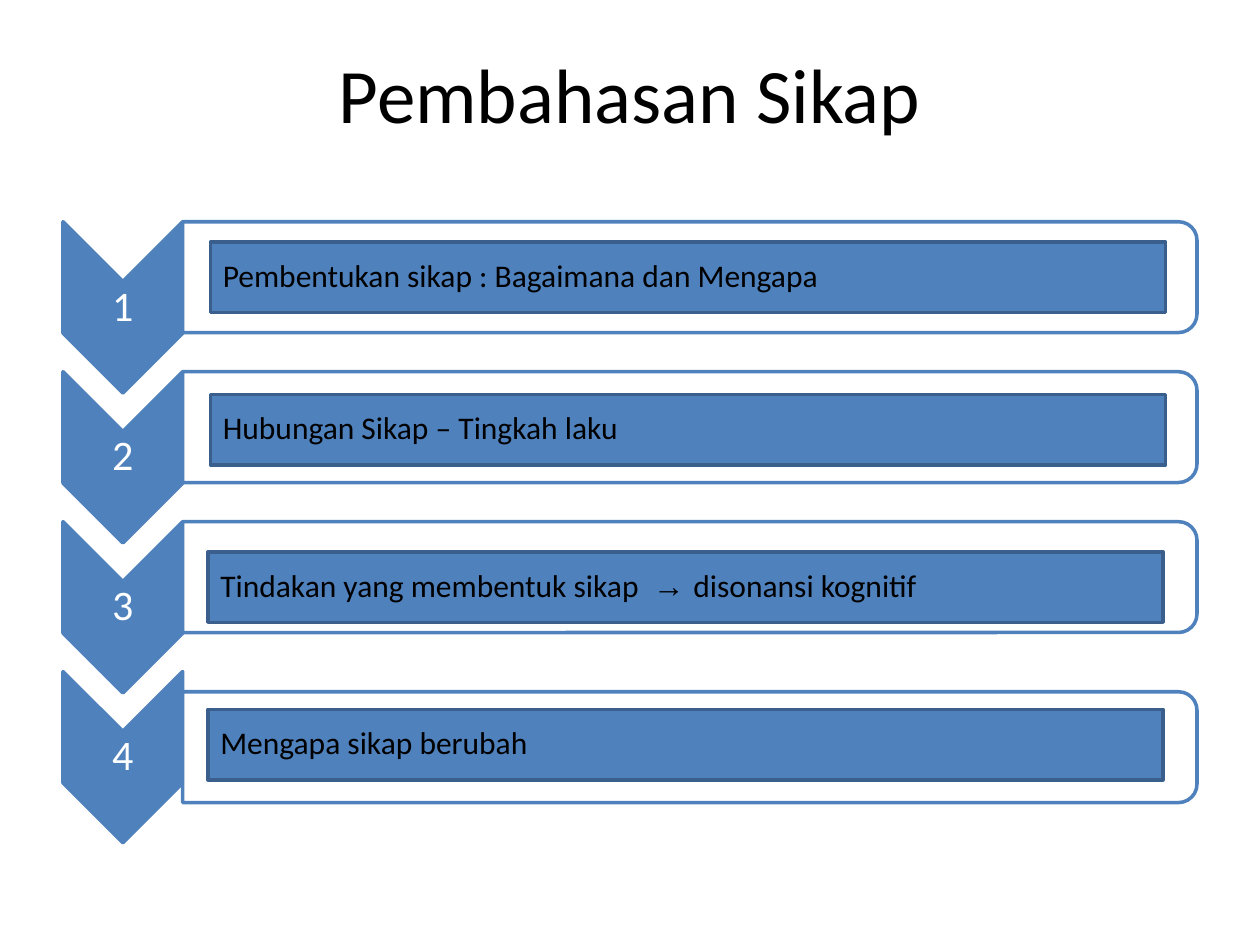
from lxml.etree import SubElement
from pptx import Presentation
from pptx.dml.color import RGBColor
from pptx.enum.shapes import MSO_SHAPE as Shape
from pptx.enum.text import MSO_ANCHOR as Anchor, PP_ALIGN as Align
from pptx.oxml.ns import qn
from pptx.util import Inches, Pt

BLUE = RGBColor(0x4F, 0x81, 0xBD)
DARK_BLUE = RGBColor(0x3A, 0x5F, 0x8C)
WHITE = RGBColor(0xFF, 0xFF, 0xFF)
BLACK = RGBColor(0, 0, 0)

FIRST_ROW, ROW_STEP = 1.76, 1.19
# Each topic: bar left, bar top, panel offset below its row, text runs
TOPICS = [
    (1.67, 1.92, 0, ["Pembentukan sikap : Bagaimana dan Mengapa"]),
    (1.67, 3.13, 0, ["Hubungan Sikap – Tingkah laku"]),
    (1.65, 4.38, 0, ["Tindakan yang membentuk sikap  ", ("→ ", "Arial"),
                     "disonansi kognitif"]),
    (1.65, 5.63, 0.16, ["Mengapa sikap berubah"]),
]


def write(frame, runs, *, size, color=BLACK, align=Align.LEFT, spacing=None,
          after=0, inset=(0.1, 0.05)):
    """Fill the frame with one paragraph; a run is text or (text, font)."""
    frame.word_wrap = True
    frame.vertical_anchor = Anchor.MIDDLE
    frame.margin_left = frame.margin_right = Inches(inset[0])
    frame.margin_top = frame.margin_bottom = Inches(inset[1])
    paragraph = frame.paragraphs[0]
    paragraph.alignment = align
    paragraph.line_spacing = spacing
    paragraph.space_after = Pt(after)
    for item in runs:
        text, font_name = (item, "Calibri") if isinstance(item, str) else item
        run = paragraph.add_run()
        run.text = text
        run.font.name = font_name
        run.font.size = Pt(size)
        run.font.color.rgb = color


class TopicSlide:
    def __init__(self, deck):
        self.slide = deck.slides.add_slide(deck.slide_layouts[5])

    def title(self, text):
        heading = self.slide.shapes.title
        heading.left, heading.top = Inches(0.5), Inches(0.3)
        heading.width, heading.height = Inches(9), Inches(0.87)
        write(heading.text_frame, [text], size=44, align=Align.CENTER)

    def block(self, kind, left, top, width, height, fill, line):
        shape = self.slide.shapes.add_shape(
            kind, Inches(left), Inches(top), Inches(width), Inches(height))
        shape.shadow.inherit = False
        shape.fill.solid()
        shape.fill.fore_color.rgb = fill
        shape.line.color.rgb = line
        shape.line.width = Pt(2)
        return shape

    def turned(self, kind, left, top, width, height, fill):
        """Add a shape turned a quarter clockwise that covers the given area."""
        shift = (width - height) / 2
        shape = self.block(kind, left + shift, top - shift, height, width,
                           fill, BLUE)
        shape.rotation = 90
        return shape

    def chevron(self, number, top):
        arrow = self.turned(Shape.CHEVRON, 0.5, top, 0.95, 1.36, BLUE)
        arrow.adjustments[0] = 0.5
        write(arrow.text_frame, [str(number)], size=24, color=WHITE,
              align=Align.CENTER, spacing=0.9, after=8.4, inset=(0.02, 0.02))
        # Turn the number back upright
        arrow.text_frame._txBody.bodyPr.set("rot", "-5400000")

    def panel(self, top):
        frame = self.turned(Shape.ROUND_2_SAME_RECTANGLE, 1.45, top, 8.05, 0.88,
                            WHITE)
        frame.adjustments[0] = 0.167
        frame.adjustments[1] = 0
        white = frame._element.spPr.find(qn("a:solidFill")).find(qn("a:srgbClr"))
        SubElement(white, qn("a:alpha")).set("val", "90000")

    def bar(self, left, top, runs):
        label = self.block(Shape.RECTANGLE, left, top, 7.58, 0.56, BLUE,
                           DARK_BLUE)
        write(label.text_frame, runs, size=18, spacing=0.9, after=3.6)


def main():
    deck = Presentation()
    deck.slide_width, deck.slide_height = Inches(10), Inches(7.5)
    page = TopicSlide(deck)
    page.title("Pembahasan Sikap")
    for row, (_, _, offset, _) in enumerate(TOPICS):
        row_top = FIRST_ROW + row * ROW_STEP
        page.chevron(row + 1, row_top)
        page.panel(row_top + offset)
    for left, top, _, runs in TOPICS:
        page.bar(left, top, runs)
    deck.save("out.pptx")


if __name__ == "__main__":
    main()
